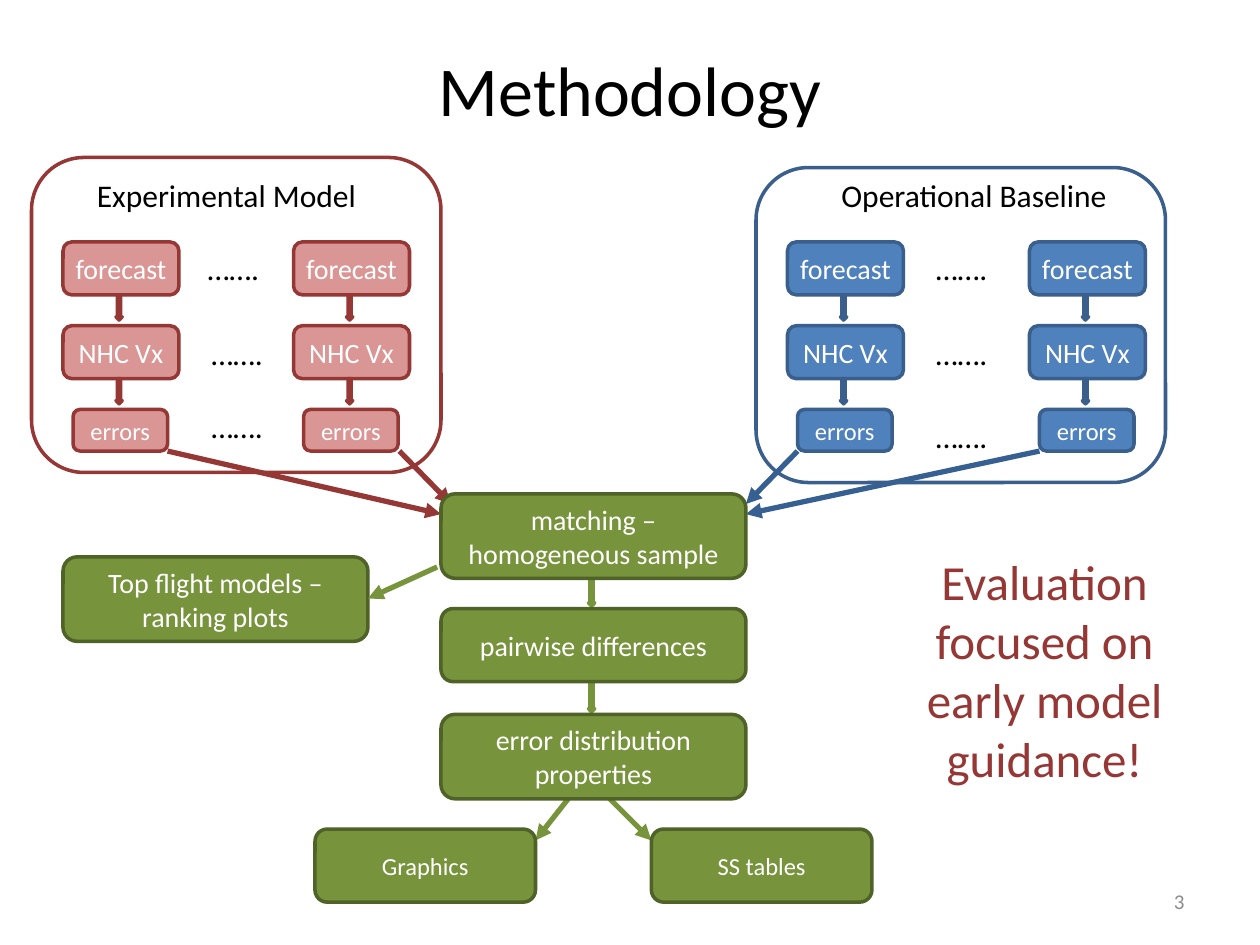
from dataclasses import dataclass

from lxml.etree import SubElement
from pptx import Presentation
from pptx.dml.color import RGBColor
from pptx.enum.shapes import MSO_CONNECTOR, MSO_SHAPE
from pptx.enum.text import MSO_ANCHOR, MSO_AUTO_SIZE, PP_ALIGN
from pptx.oxml.ns import qn
from pptx.util import Inches, Pt


@dataclass(frozen=True)
class Palette:
    fill: str
    edge: str
    arrow: str


@dataclass(frozen=True)
class Theme:
    font: str = "Calibri"
    black: str = "000000"
    white: str = "FFFFFF"
    grey: str = "8C8C8C"
    accent: str = "953735"
    pale_green: str = "C3D69B"
    red: Palette = Palette("D99694", "953735", "953735")
    blue: Palette = Palette("4F81BD", "3A5F8C", "376092")
    green: Palette = Palette("77933C", "4F6228", "77933C")
    title: int = 40
    callout: int = 28
    heading: int = 18
    step: int = 16
    small: int = 14
    number: int = 12
    edge_width: int = 2
    arrow_width: int = 3


THEME = Theme()


def color(value):
    return RGBColor.from_string(value)


def style_para(para, size, ink, align):
    para.alignment = align
    para.font.name = THEME.font
    para.font.size = Pt(size)
    para.font.color.rgb = color(ink)


def add_block(shapes, kind, box, fill, edge):
    """Add a preset shape; fill None leaves it hollow."""
    block = shapes.add_shape(kind, *map(Inches, box))
    block.shadow.inherit = False
    if fill is None:
        block.fill.background()
    else:
        block.fill.solid()
        block.fill.fore_color.rgb = color(fill)
    block.line.color.rgb = color(edge)
    block.line.width = Pt(THEME.edge_width)
    return block


def add_step(shapes, box, text, palette, size=THEME.step, tight=False):
    step = add_block(shapes, MSO_SHAPE.ROUNDED_RECTANGLE, box, palette.fill, palette.edge)
    frame = step.text_frame
    frame.word_wrap = True
    frame.vertical_anchor = MSO_ANCHOR.MIDDLE
    if tight:
        frame.margin_left = frame.margin_right = Inches(0.05)
    frame.text = text
    style_para(frame.paragraphs[0], size, THEME.white, PP_ALIGN.CENTER)


def add_label(shapes, box, text, size=THEME.heading, ink=THEME.black,
              align=PP_ALIGN.LEFT, wrap=False):
    frame = shapes.add_textbox(*map(Inches, box)).text_frame
    frame.word_wrap = wrap
    frame.auto_size = MSO_AUTO_SIZE.SHAPE_TO_FIT_TEXT
    frame.text = text
    style_para(frame.paragraphs[0], size, ink, align)


def add_arrow(shapes, start, end, ink):
    arrow = shapes.add_connector(MSO_CONNECTOR.STRAIGHT, *map(Inches, (*start, *end)))
    arrow.line.color.rgb = color(ink)
    arrow.line.width = Pt(THEME.arrow_width)
    SubElement(arrow.line._get_or_add_ln(), qn("a:tailEnd"), type="triangle")
    SubElement(arrow._element.spPr, qn("a:effectLst"))


def add_title(page, box, text):
    title = page.shapes.title
    title.left, title.top, title.width, title.height = map(Inches, box)
    title.text_frame.text = text
    title.text_frame.vertical_anchor = MSO_ANCHOR.MIDDLE
    style_para(title.text_frame.paragraphs[0], THEME.title, THEME.black, PP_ALIGN.CENTER)


def add_column(page, left, top, palette):
    """One forecast run: forecast, verification, errors."""
    shapes = page.shapes.add_group_shape().shapes
    pitch, width, height = 0.665, 0.92, 0.42
    add_step(shapes, (left, top, width, height), "forecast", palette, tight=True)
    add_step(shapes, (left, top + pitch, width, height), "NHC Vx", palette)
    add_step(shapes, (left + 0.08, top + 2 * pitch, 0.75, 0.33), "errors", palette,
             THEME.small, tight=True)
    for row in range(2):
        add_block(shapes, MSO_SHAPE.DOWN_ARROW,
                  (left + 0.42, top + row * pitch + height, 0.05, 0.2),
                  palette.fill, palette.edge)


def add_model_panel(page, box, heading, palette, heading_box, columns, column_top, dots):
    """Framed model with two runs; inner places are offsets from the box."""
    left, top = box[:2]
    add_block(page.shapes, MSO_SHAPE.ROUNDED_RECTANGLE, box, None, palette.edge)
    x, y, width = heading_box
    add_label(page.shapes, (left + x, top + y, width, 0.4), heading)
    for x in columns:
        add_column(page, left + x, top + column_top, palette)
    for x, y in dots:
        add_label(page.shapes, (left + x, top + y, 0.61, 0.4), "…….")


def add_error_arrows(page):
    """Errors of every run feed the matching step."""
    for start, end, palette in (
        ((1.33, 3.58), (3.5, 4.08), THEME.red),
        ((3.17, 3.58), (3.58, 4), THEME.red),
        ((6.33, 3.58), (5.92, 4), THEME.blue),
        ((8.25, 3.58), (5.92, 4.08), THEME.blue),
    ):
        add_arrow(page.shapes, start, end, palette.arrow)


def add_evaluation_flow(page, left, top):
    """Green flow from matching down to the outputs."""
    shapes, green, width = page.shapes, THEME.green, 2.42
    # Arrows lie behind the steps
    for x, y in ((1.25, 2.33), (1.08, 2.33)):
        end = (left + (1.67 if x > 1.2 else 0.75), top + 2.75)
        add_arrow(shapes, (left + x, top + y), end, green.arrow)
    for y in (0.66, 1.5):
        add_block(shapes, MSO_SHAPE.DOWN_ARROW, (left + 1.17, top + y, 0.05, 0.23),
                  THEME.pale_green, green.arrow)
    # Main steps
    for y, height, text in (
        (0, 0.67, "matching – homogeneous sample"),
        (0.91, 0.58, "pairwise differences"),
        (1.75, 0.67, "error distribution properties"),
    ):
        add_step(shapes, (left, top + y, width, height), text, green)
    # Outputs
    for x, text in ((-1, "Graphics"), (1.67, "SS tables")):
        add_step(shapes, (left + x, top + 2.66, 1.75, 0.58), text, green,
                 THEME.small, tight=True)
    # Side branch
    branch = shapes.add_group_shape().shapes
    add_step(branch, (left - 3, top + 0.5, width, 0.67),
             "Top flight models – ranking plots", green)
    add_arrow(branch, (left - 0.03, top + 0.58), (left - 0.58, top + 0.83), green.arrow)


def add_page_number(page, box, number):
    frame = page.shapes.add_textbox(*map(Inches, box)).text_frame
    frame.word_wrap = True
    frame.vertical_anchor = MSO_ANCHOR.MIDDLE
    frame.text = number
    style_para(frame.paragraphs[0], THEME.number, THEME.grey, PP_ALIGN.RIGHT)


def main():
    deck = Presentation()
    deck.slide_width, deck.slide_height = Inches(10), Inches(7.5)
    page = deck.slides.add_slide(deck.slide_layouts[5])

    add_title(page, (0.5, 0.2, 9, 1), "Methodology")
    add_model_panel(page, (0.25, 1.25, 3.25, 2.5), "Experimental Model", THEME.red,
                    (0.42, 0.1, 2.28), (0.25, 2.08), 0.67,
                    ((1.3, 0.68), (1.33, 1.35), (1.33, 1.93)))
    add_model_panel(page, (6, 1.33, 3.25, 2.5), "Operational Baseline", THEME.blue,
                    (0.58, 0.02, 2.33), (0.25, 2.17), 0.59,
                    ((1.33, 0.6), (1.33, 1.27), (1.33, 1.93)))
    add_error_arrows(page)
    add_evaluation_flow(page, 3.5, 3.92)
    add_label(page.shapes, (7, 4.33, 2.58, 1.99),
              "Evaluation focused on early model guidance!",
              THEME.callout, THEME.accent, PP_ALIGN.CENTER, wrap=True)
    add_page_number(page, (7.17, 6.95, 2.33, 0.4), "3")

    deck.save("out.pptx")


if __name__ == "__main__":
    main()
